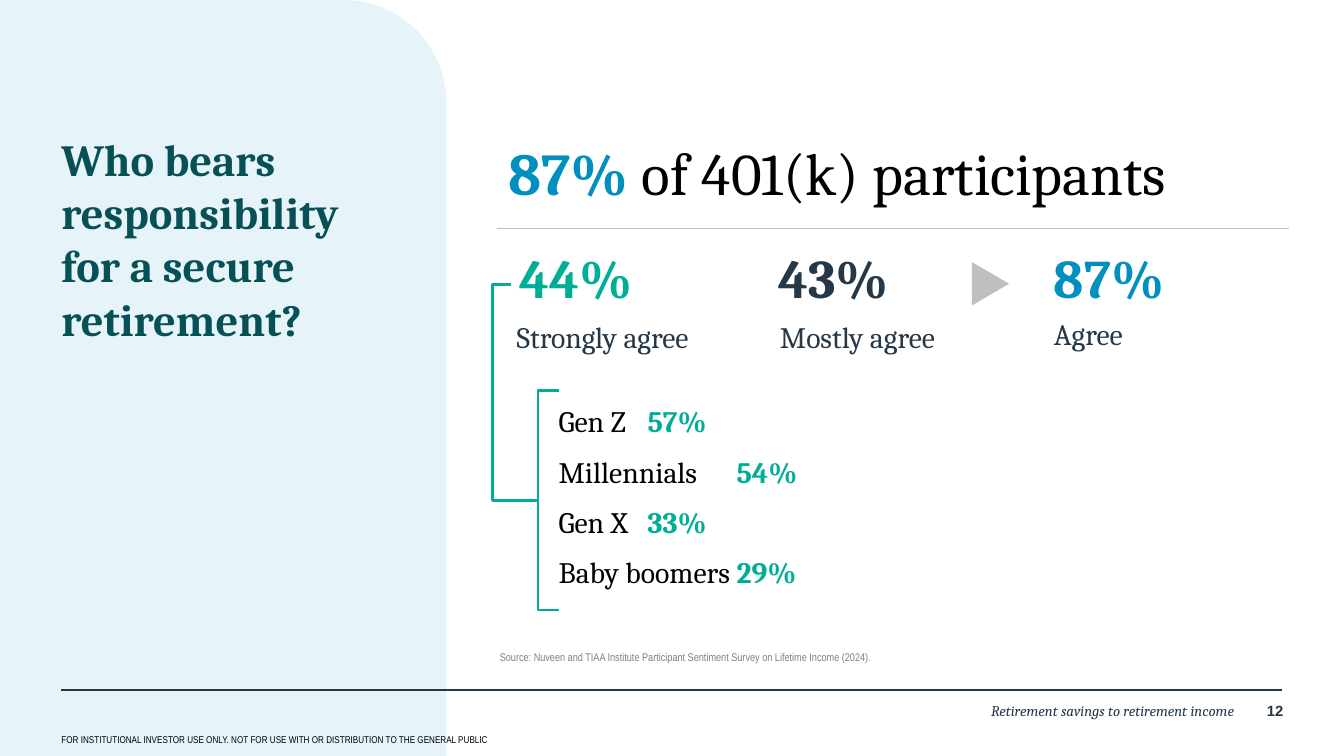
from dataclasses import dataclass
from typing import Any

from lxml import etree
from pptx import Presentation
from pptx import util as u
from pptx.dml.color import RGBColor
from pptx.enum import shapes, text
from pptx.oxml import ns


@dataclass(frozen=True)
class Theme:
    serif: str = "Cambria"
    sans: str = "Arial"
    thin: str = "Arial Narrow"
    panel: str = "E6F4F9"
    navy: str = "263746"
    pine: str = "075156"
    blue: str = "008FBE"
    green: str = "00AD97"
    black: str = "000000"
    gray: str = "808080"
    pale: str = "BFBFBF"
    hero: int = 48
    stat: int = 44
    title: int = 36
    label: int = 24
    foot: int = 12
    source: int = 9
    legal: int = 8


@dataclass(frozen=True)
class Box:
    x: float
    y: float
    w: float
    h: float

    def pts(self) -> list[u.Pt]:
        return [u.Pt(v) for v in (self.x, self.y, self.w, self.h)]


@dataclass(frozen=True)
class Style:
    size: int
    color: str
    face: str = "Cambria"
    bold: bool = False
    slant: bool = False


@dataclass(frozen=True)
class Note:
    words: str
    box: Box
    style: Style
    align: Any = text.PP_ALIGN.LEFT
    anchor: Any = text.MSO_ANCHOR.TOP


@dataclass(frozen=True)
class Stat:
    value: str
    label: str
    color: str
    x: float
    left: float
    top: float


@dataclass(frozen=True)
class Rule:
    x: float
    end: float
    y: float
    color: str
    width: float


T = Theme()
PLAIN = Style(T.label, T.black)
NOTES = [
    Note("12", Box(1010.2, 568.1, 28.8, 23.8), Style(T.foot, T.navy, T.sans, bold=True),
         text.PP_ALIGN.RIGHT),
    Note("Retirement savings to retirement income", Box(383, 568.1, 616.3, 28.8),
         Style(T.foot, T.navy, slant=True), text.PP_ALIGN.RIGHT),
    Note("FOR INSTITUTIONAL INVESTOR USE ONLY. NOT FOR USE WITH OR DISTRIBUTION TO THE GENERAL PUBLIC",
         Box(49.7, 594, 781.2, 10), Style(T.legal, T.black, T.thin)),
    Note("Source: Nuveen and TIAA Institute Participant Sentiment Survey on Lifetime Income (2024).",
         Box(404.6, 507.6, 634.3, 29.5), Style(T.source, T.gray, T.thin),
         anchor=text.MSO_ANCHOR.BOTTOM),
]
STATS = [
    Stat("44%", "Strongly agree", T.green, 420.5, 418.3, 257.8),
    Stat("43%", "Mostly agree", T.navy, 630, 631.4, 258.5),
    Stat("87%", "Agree", T.blue, 853.2, 853.2, 255.6),
]
RULES = [Rule(49.7, 1038.2, 558.7, T.navy, 2), Rule(402.5, 1043.3, 185, T.pale, 1)]
GROUPS = [("Gen Z", "57%"), ("Millennials", "54%"), ("Gen X", "33%"), ("Baby boomers", "29%")]


def paint(font: Any, style: Style) -> None:
    font.name, font.size = style.face, u.Pt(style.size)
    font.bold, font.italic = style.bold, style.slant
    font.color.rgb = RGBColor.from_string(style.color)


def setup(frame: Any, anchor: Any = text.MSO_ANCHOR.TOP) -> None:
    frame.margin_left = frame.margin_top = frame.margin_right = frame.margin_bottom = 0
    frame.auto_size = text.MSO_AUTO_SIZE.NONE
    frame.word_wrap = True
    frame.vertical_anchor = anchor


def place(shape: Any, box: Box) -> None:
    shape.left, shape.top, shape.width, shape.height = box.pts()


def write(slide: Any, note: Note) -> None:
    frame = slide.shapes.add_textbox(*note.box.pts()).text_frame
    setup(frame, note.anchor)
    para = frame.paragraphs[0]
    para.text, para.alignment = note.words, note.align
    paint(para.font, note.style)


def pair(para: Any, parts: list[tuple[str, Style]]) -> None:
    para.font.name, para.font.size = parts[0][1].face, u.Pt(parts[0][1].size)
    for words, style in parts:
        run = para.add_run()
        run.text = words
        run.font.bold = style.bold
        run.font.color.rgb = RGBColor.from_string(style.color)


def draw(slide: Any, kind: Any, box: Box, fill: str) -> Any:
    shape = slide.shapes.add_shape(kind, *box.pts())
    shape.shadow.inherit = False
    shape.fill.solid()
    shape.fill.fore_color.rgb = RGBColor.from_string(fill)
    shape.line.fill.background()
    return shape


def stroke(shape: Any, color: str, width: float) -> None:
    shape.line.color.rgb = RGBColor.from_string(color)
    shape.line.width = u.Pt(width)


def rule(slide: Any, item: Rule) -> None:
    line = slide.shapes.add_connector(shapes.MSO_CONNECTOR.STRAIGHT, u.Pt(item.x), u.Pt(item.y),
                                      u.Pt(item.end), u.Pt(item.y))
    stroke(line, item.color, item.width)
    etree.SubElement(line.element.spPr, ns.qn("a:effectLst"))


def title(slide: Any) -> None:
    shape = slide.shapes.title
    place(shape, Box(49.7, 106.6, 277.2, 131))
    setup(shape.text_frame)
    para = shape.text_frame.paragraphs[0]
    para.text = "Who bears responsibility for a secure retirement?"
    para.alignment = text.PP_ALIGN.LEFT
    paint(para.font, Style(T.title, T.pine, bold=True))


def ages(slide: Any) -> None:
    shape = slide.placeholders[1]
    place(shape, Box(452.2, 326.2, 365, 164.2))
    frame = shape.text_frame
    setup(frame)
    for i, (name, share) in enumerate(GROUPS):
        para = frame.add_paragraph() if i else frame.paragraphs[0]
        para.space_before, para.space_after = u.Pt(0), u.Pt(12)
        props = para._p.get_or_add_pPr()
        props.set("marL", "0")
        props.set("indent", "0")
        etree.SubElement(props, ns.qn("a:buNone"))
        tabs = etree.SubElement(props, ns.qn("a:tabLst"))
        etree.SubElement(tabs, ns.qn("a:tab"), pos=str(u.Pt(170.6)), algn="l")
        pair(para, [(name + "\t", PLAIN), (share, Style(T.label, T.green, bold=True))])


def links(slide: Any) -> None:
    brace = slide.shapes.add_shape(shapes.MSO_SHAPE.LEFT_BRACKET,
                                   *Box(435.6, 316.1, 16.6, 177.8).pts())
    brace.adjustments[0] = 0
    path = [(u.Pt(x), u.Pt(y)) for x, y in
            [(413.3, 230.4), (398.9, 230.4), (398.9, 405), (435.6, 405)]]
    form = slide.shapes.build_freeform(*path[0])
    form.add_line_segments(path[1:], close=False)
    for shape in (brace, form.convert_to_shape()):
        shape.shadow.inherit = False
        shape.fill.background()
        stroke(shape, T.green, 2.25)


def main() -> None:
    deck = Presentation()
    deck.slide_width, deck.slide_height = u.Pt(1088), u.Pt(612)
    slide = deck.slides.add_slide(deck.slide_layouts[1])
    panel = draw(slide, shapes.MSO_SHAPE.ROUND_1_RECTANGLE, Box(0, 0, 361.4, 612), T.panel)
    panel.adjustments[0] = 0.23
    slide.shapes.element.insert(2, panel.element)
    title(slide)
    ages(slide)
    for item in RULES:
        rule(slide, item)
    for note in NOTES:
        write(slide, note)
    head = slide.shapes.add_textbox(*Box(411.8, 110.2, 624, 58).pts()).text_frame
    setup(head)
    pair(head.paragraphs[0], [("87% ", Style(T.hero, T.blue, bold=True)),
                              ("of 401(k) participants", Style(T.hero, T.black))])
    for stat in STATS:
        write(slide, Note(stat.value, Box(stat.x, 197.3, 101.5, 38.9),
                          Style(T.stat, stat.color, bold=True)))
        write(slide, Note(stat.label, Box(stat.left, stat.top, 198, 28), Style(T.label, T.navy)))
    arrow = draw(slide, shapes.MSO_SHAPE.ISOSCELES_TRIANGLE, Box(784.1, 214.6, 35.3, 30.2), T.pale)
    arrow.rotation = 90
    links(slide)
    deck.save("out.pptx")


if __name__ == "__main__":
    main()
